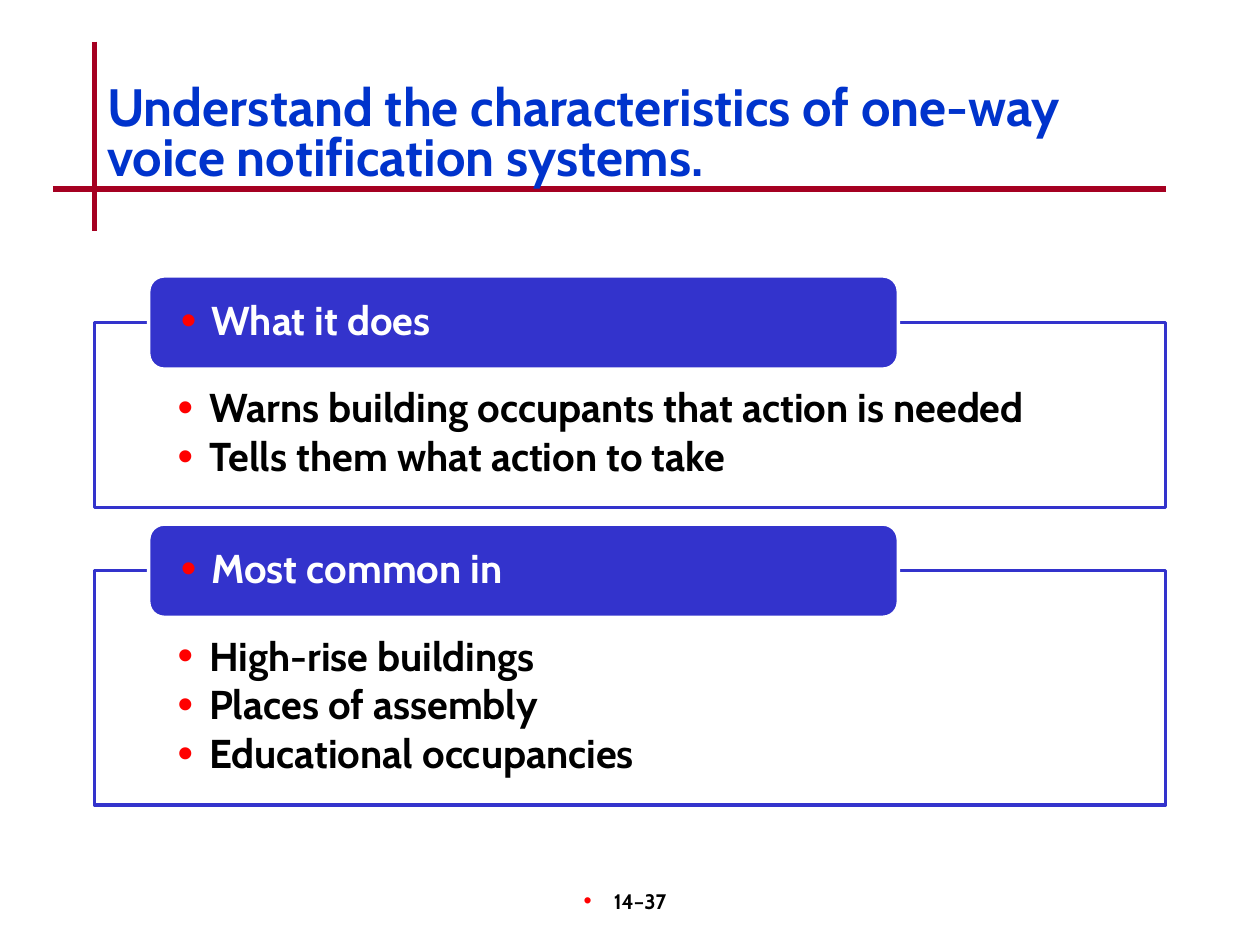
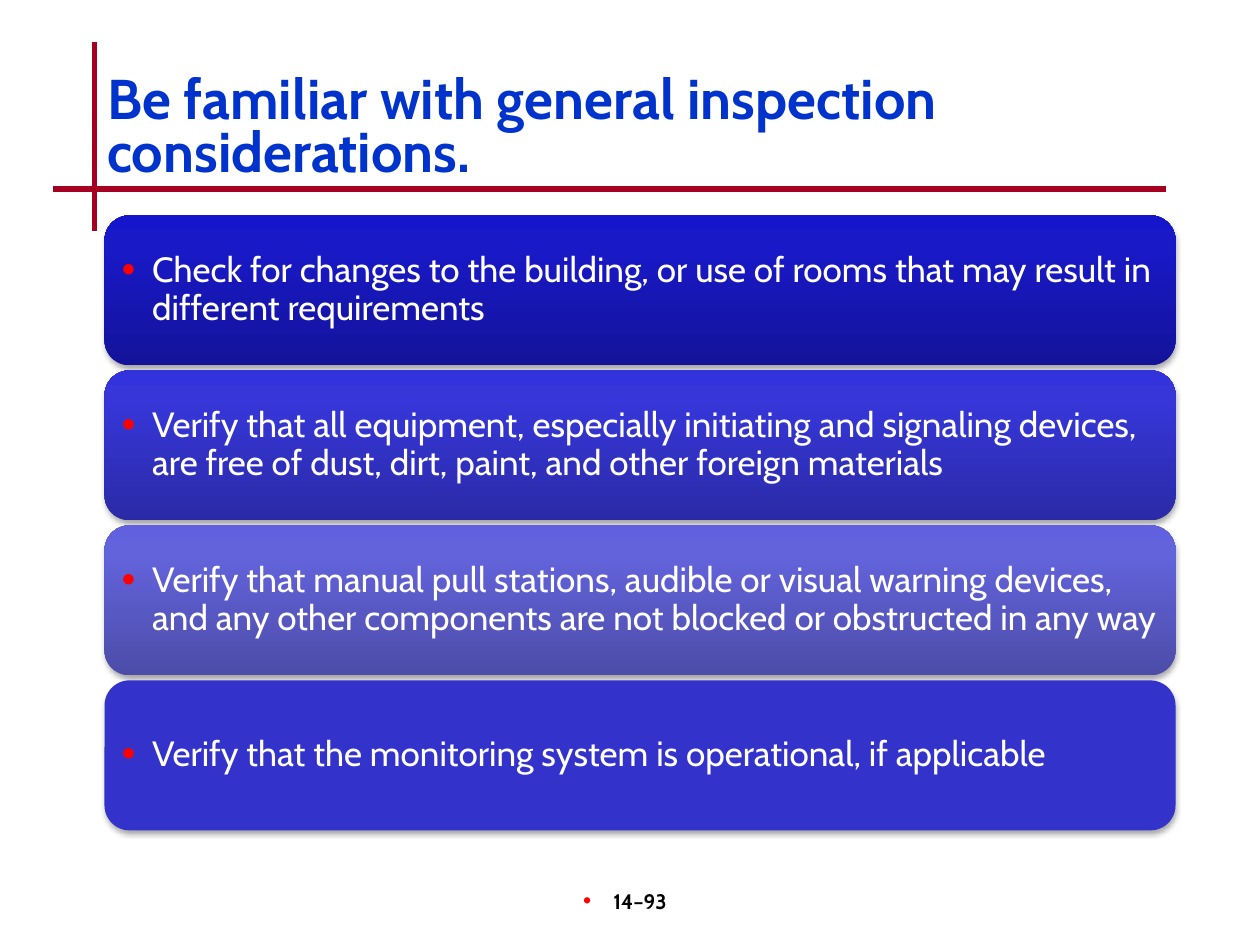
from copy import deepcopy
from dataclasses import dataclass

from lxml import etree
from pptx import Presentation
from pptx.dml.color import RGBColor
from pptx.enum.shapes import MSO_CONNECTOR, MSO_SHAPE
from pptx.enum.text import MSO_ANCHOR, MSO_AUTO_SIZE, PP_ALIGN
from pptx.oxml.ns import qn
from pptx.util import Inches, Pt

LEFT, CENTER = PP_ALIGN.LEFT, PP_ALIGN.CENTER
TOP, MIDDLE = MSO_ANCHOR.TOP, MSO_ANCHOR.MIDDLE
RECT, ROUND = MSO_SHAPE.RECTANGLE, MSO_SHAPE.ROUNDED_RECTANGLE
STRAIGHT = MSO_CONNECTOR.STRAIGHT
FIXED = MSO_AUTO_SIZE.NONE


@dataclass(frozen=True)
class Theme:
    font: str = "Cabin"
    title: str = "0033CC"
    rule: str = "A50021"
    blue: str = "3333CC"
    dot: str = "FF0000"
    black: str = "000000"
    white: str = "FFFFFF"
    list_size: int = 23
    card_size: int = 20
    page_size: int = 12


theme = Theme()


def write(para, text, size, color, bold=True, space=0.9, align=LEFT, hang=0.0):
    if hang:
        props = para._p.get_or_add_pPr()
        props.set("marL", str(Inches(hang)))
        props.set("indent", str(-Inches(hang)))
        tint = etree.SubElement(props, qn("a:buClr"))
        etree.SubElement(tint, qn("a:srgbClr"), val=theme.dot)
        etree.SubElement(props, qn("a:buSzPct"), val="110000")
        etree.SubElement(props, qn("a:buFont"), typeface="Arial")
        etree.SubElement(props, qn("a:buChar"), char="•")
    para.alignment = align
    para.line_spacing = space
    run = para.add_run()
    run.text = text
    font = run.font
    font.name, font.size, font.bold = theme.font, Pt(size), bold
    font.color.rgb = RGBColor.from_string(color)


def add_box(slide, kind, at, fill, line, anchor, pads):
    box = slide.shapes.add_shape(kind, *map(Inches, at))
    box.shadow.inherit = False
    box.fill.solid()
    box.fill.fore_color.rgb = RGBColor.from_string(fill)
    if line:
        box.line.color.rgb = RGBColor.from_string(line)
        box.line.width = Pt(2)
    else:
        box.line.fill.background()
    frame = box.text_frame
    frame.word_wrap = True
    frame.vertical_anchor = anchor
    frame.margin_left = frame.margin_right = Inches(pads[0])
    frame.margin_top, frame.margin_bottom = Inches(pads[1]), Inches(pads[2])
    return box


deck = Presentation()
deck.slide_width, deck.slide_height = Inches(10), Inches(7.5)
layout = deck.slide_layouts[5]

heads = [
    ("Understand the characteristics of one-way voice notification systems.", 30, 0.58, "14–37"),
    ("Be familiar with general inspection considerations.", 32, 0.53, "14–93"),
]
slides = []
for text, size, top, page in heads:
    slide = deck.slides.add_slide(layout)
    title = slide.shapes.title
    title.left, title.top = Inches(0.75), Inches(top)
    title.width, title.height = Inches(8.5), Inches(1)
    frame = title.text_frame
    frame.word_wrap = True
    frame.auto_size = FIXED
    frame.vertical_anchor = MIDDLE
    write(frame.paragraphs[0], text, size, theme.title, space=0.8)

    foot = slide.shapes.add_textbox(Inches(3.92), Inches(7), Inches(2.08), Inches(0.5))
    foot.text_frame.word_wrap = True
    write(foot.text_frame.paragraphs[0], page, theme.page_size, theme.black,
          space=1.0, align=CENTER, hang=0.24)
    slides.append(slide)

voice, checks = slides

rules = [(0.75, 0.33, 0.75, 1.83), (0.42, 1.5, 9.25, 1.5)]
for num, ends in enumerate(rules, 20):
    rule = voice.shapes.add_connector(STRAIGHT, *map(Inches, ends))
    rule.line.color.rgb = RGBColor.from_string(theme.rule)
    rule.line.width = Pt(3)
    etree.SubElement(rule.element.spPr, qn("a:effectLst"))
    rule.element.nvCxnSpPr.cNvPr.set("id", str(num))
    deck.slide_master.shapes.element.append(rule.element)

groups = [
    ("What it does", 1.47,
     ["Warns building occupants that action is needed", "Tells them what action to take"]),
    ("Most common in", 1.86,
     ["High-rise buildings", "Places of assembly", "Educational occupancies"]),
]
top = 2.19
for head, height, items in groups:
    panel = add_box(voice, RECT, (0.75, top + 0.37, 8.5, height),
                    theme.white, theme.blue, TOP, (0.66, 0.52, 0.18))
    frame = panel.text_frame
    for num, item in enumerate(items):
        para = frame.add_paragraph() if num else frame.paragraphs[0]
        write(para, item, theme.list_size, theme.black, hang=0.25)
        para.space_after = Pt(3)
    label = add_box(voice, ROUND, (1.18, top, 5.95, 0.74),
                    theme.blue, theme.white, MIDDLE, (0.22, 0, 0))
    write(label.text_frame.paragraphs[0], head, theme.list_size, theme.white, hang=0.24)
    top += 0.37 + height + 0.13

cards = [
    ("Check for changes to the building, or use of rooms that may result in different requirements",
     ("13139A", "1919C8", "1515CC")),
    ("Verify that all equipment, especially initiating and signaling devices, "
     "are free of dust, dirt, paint, and other foreign materials",
     ("2A2AA7", "3636D9", "3333DD")),
    ("Verify that manual pull stations, audible or visual warning devices, "
     "and any other components are not blocked or obstructed in any way",
     ("4C4CA9", "6363DB", "6161DF")),
    ("Verify that the monitoring system is operational, if applicable", ()),
]
for num, (text, shades) in enumerate(cards):
    card = add_box(checks, ROUND, (0.83, 1.71 + num * 1.23, 8.5, 1.19),
                   theme.blue, None, MIDDLE, (0.08, 0.08, 0.08))
    props = card.element.spPr
    if shades:
        card.fill.gradient()
        card.fill.gradient_angle = 90
        stops = props.find(".//" + qn("a:gsLst"))
        stops.append(deepcopy(stops[0]))
        for stop, spot, shade in zip(card.fill.gradient_stops, (0, 0.8, 1), shades):
            stop.position = spot
            stop.color.rgb = RGBColor.from_string(shade)
    shade = etree.SubElement(props.find(qn("a:effectLst")), qn("a:outerShdw"),
                             blurRad=str(Pt(3.1)), dist=str(Pt(1.8)),
                             dir="5400000", rotWithShape="0")
    tint = etree.SubElement(shade, qn("a:srgbClr"), val=theme.black)
    etree.SubElement(tint, qn("a:alpha"), val="35000")
    write(card.text_frame.paragraphs[0], text, theme.card_size, theme.white,
          bold=False, hang=0.24)

deck.save("out.pptx")
